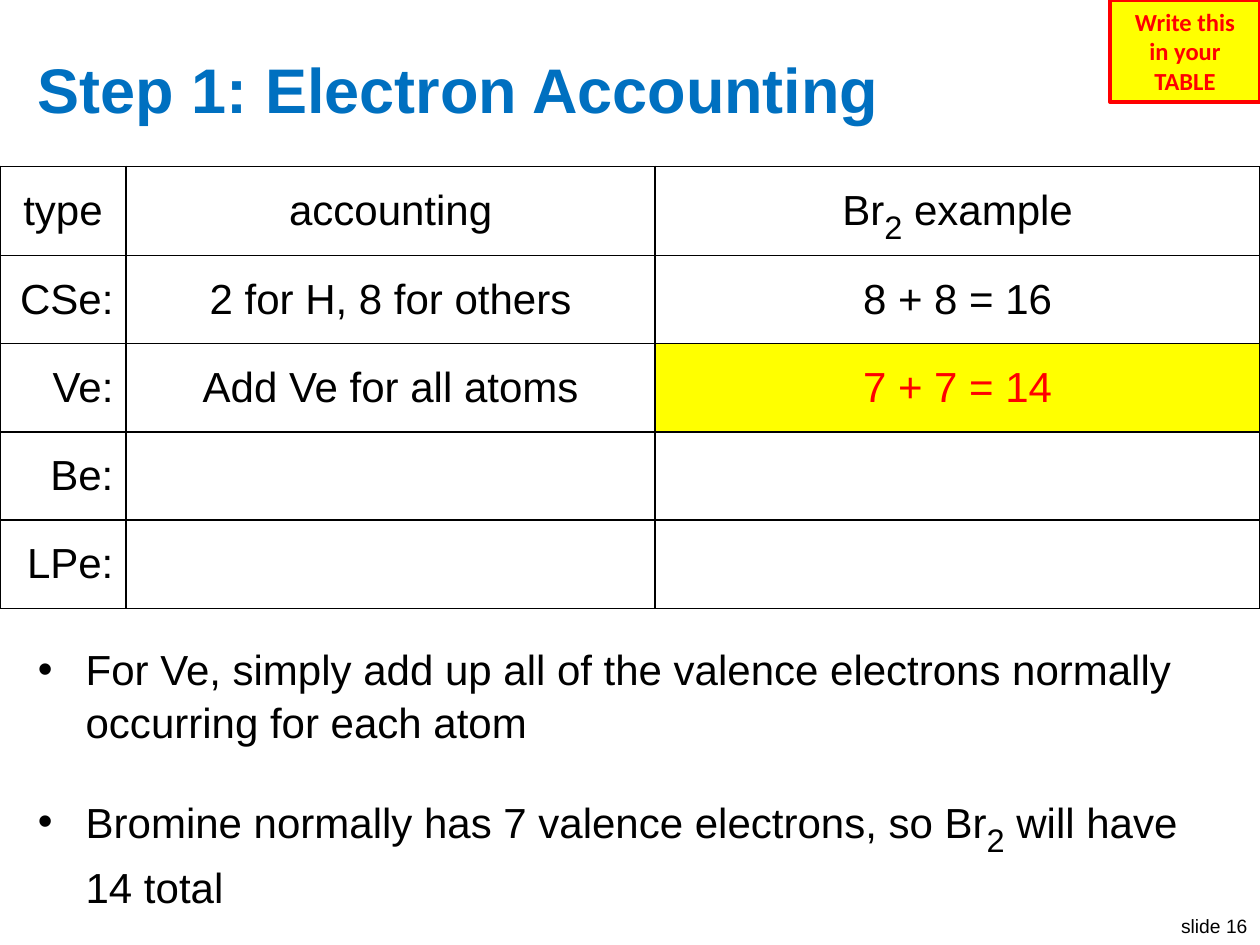
from lxml import etree
from pptx import Presentation
from pptx import util as u
from pptx.dml.color import RGBColor
from pptx.enum import shapes, text
from pptx.oxml import ns

BLACK = RGBColor(0x00, 0x00, 0x00)
WHITE = RGBColor(0xFF, 0xFF, 0xFF)
BLUE = RGBColor(0x00, 0x70, 0xC0)
RED = RGBColor(0xFF, 0x00, 0x00)
YELLOW = RGBColor(0xFF, 0xFF, 0x00)

LEFT, MID, RIGHT = text.PP_ALIGN.LEFT, text.PP_ALIGN.CENTER, text.PP_ALIGN.RIGHT


class Page:
    """Text style and the slide being built."""
    font, size, sub = "Arial", 24, 32

    def __init__(self, slide):
        self.slide = slide

    def style(self, run, size, color, bold=False, font=None):
        run.font.name = font or self.font
        run.font.size = u.Pt(size)
        run.font.color.rgb = color
        run.font.bold = bold

    def put(self, par, words, align=LEFT, size=None, color=BLACK, **look):
        """Fill a paragraph; parts between underscores become subscripts."""
        par.alignment = align
        for i, part in enumerate(words.split("_")):
            run = par.add_run()
            run.text = part
            low = i % 2 == 1
            self.style(run, self.sub if low else size or self.size, color, **look)
            if low:
                run.font._element.set("baseline", "-25000")

    def place(self, item, x, y, w, h):
        item.left, item.top = u.Inches(x), u.Inches(y)
        item.width, item.height = u.Inches(w), u.Inches(h)
        item.text_frame.auto_size = text.MSO_AUTO_SIZE.NONE

    def title(self, words, box):
        item = self.slide.shapes.title
        self.place(item, *box)
        item.text_frame.vertical_anchor = text.MSO_ANCHOR.MIDDLE
        self.put(item.text_frame.paragraphs[0], words, size=36, color=BLUE, bold=True)

    def bullets(self, lines, box):
        item = self.slide.placeholders[1]
        self.place(item, *box)
        frame = item.text_frame
        for i, line in enumerate(lines):
            par = frame.add_paragraph() if i else frame.paragraphs[0]
            self.put(par, line)
            par.line_spacing = 1.05
            par.space_before, par.space_after = u.Pt(12), u.Pt(6)
            props = par._p.get_or_add_pPr()
            props.set("marL", str(u.Inches(0.38)))
            props.set("indent", str(u.Inches(-0.38)))
            etree.SubElement(props, ns.qn("a:buFont"), typeface=self.font)
            etree.SubElement(props, ns.qn("a:buChar"), char="•")

    def border(self, cell):
        props = cell._tc.get_or_add_tcPr()
        for i, side in enumerate(("lnL", "lnR", "lnT", "lnB")):
            line = etree.Element(ns.qn("a:" + side), w=str(u.Pt(1)))
            fill = etree.SubElement(line, ns.qn("a:solidFill"))
            etree.SubElement(fill, ns.qn("a:srgbClr"), val=str(BLACK))
            props.insert(i, line)

    def table(self, rows, widths, high, top, mark):
        """Draw the grid; mark is the (row, column) of the highlighted cell."""
        grid = self.slide.shapes.add_table(
            len(rows), len(widths), 0, u.Inches(top),
            u.Inches(sum(widths)), u.Inches(high * len(rows))).table
        grid.first_row = grid.horz_banding = False
        for col, width in zip(grid.columns, widths):
            col.width = u.Inches(width)
        for r, row in enumerate(rows):
            for c, words in enumerate(row):
                cell, lit = grid.cell(r, c), (r, c) == mark
                cell.vertical_anchor = text.MSO_ANCHOR.MIDDLE
                cell.fill.solid()
                cell.fill.fore_color.rgb = YELLOW if lit else WHITE
                self.border(cell)
                if words:
                    self.put(cell.text_frame.paragraphs[0], words,
                             RIGHT if r and not c else MID,
                             color=RED if lit else BLACK)

    def badge(self, lines, box):
        item = self.slide.shapes.add_shape(
            shapes.MSO_SHAPE.RECTANGLE, *map(u.Inches, box))
        item.shadow.inherit = False
        item.fill.solid()
        item.fill.fore_color.rgb = YELLOW
        item.line.color.rgb = RED
        item.line.width = u.Pt(2.25)
        frame = item.text_frame
        frame.word_wrap = True
        for i, line in enumerate(lines):
            par = frame.add_paragraph() if i else frame.paragraphs[0]
            self.put(par, line, MID, 14, RED, bold=True, font="Calibri")

    def label(self, words, box):
        item = self.slide.shapes.add_textbox(*map(u.Inches, box))
        item.text_frame.word_wrap = False
        self.put(item.text_frame.paragraphs[0], words, RIGHT, 11)


def main():
    deck = Presentation()
    deck.slide_width, deck.slide_height = u.Inches(10), u.Inches(7.5)
    page = Page(deck.slides.add_slide(deck.slide_layouts[1]))

    # Slide number and heading
    page.label("slide 16", (9.25, 7.21, 0.75, 0.29))
    page.title("Step 1: Electron Accounting", (0.2, 0.3, 9.6, 0.8))

    # Explanation
    page.bullets([
        "For Ve, simply add up all of the valence electrons normally "
        "occurring for each atom",
        "Bromine normally has 7 valence electrons, so Br_2_ will have 14 total",
    ], (0.2, 5.04, 9.6, 2.22))

    # Accounting table
    page.table([
        ("type", "accounting", "Br_2_ example"),
        ("CSe:", "2 for H, 8 for others", "8 + 8 = 16"),
        ("Ve:", "Add Ve for all atoms", "7 + 7 = 14"),
        ("Be:", "", ""),
        ("LPe:", "", ""),
    ], (1, 4.2, 4.8), 0.7, 1.32, mark=(2, 2))

    # Reminder in the corner
    page.badge(["Write this", "in your TABLE"], (8.81, 0, 1.19, 0.81))

    deck.save("out.pptx")


if __name__ == "__main__":
    main()
